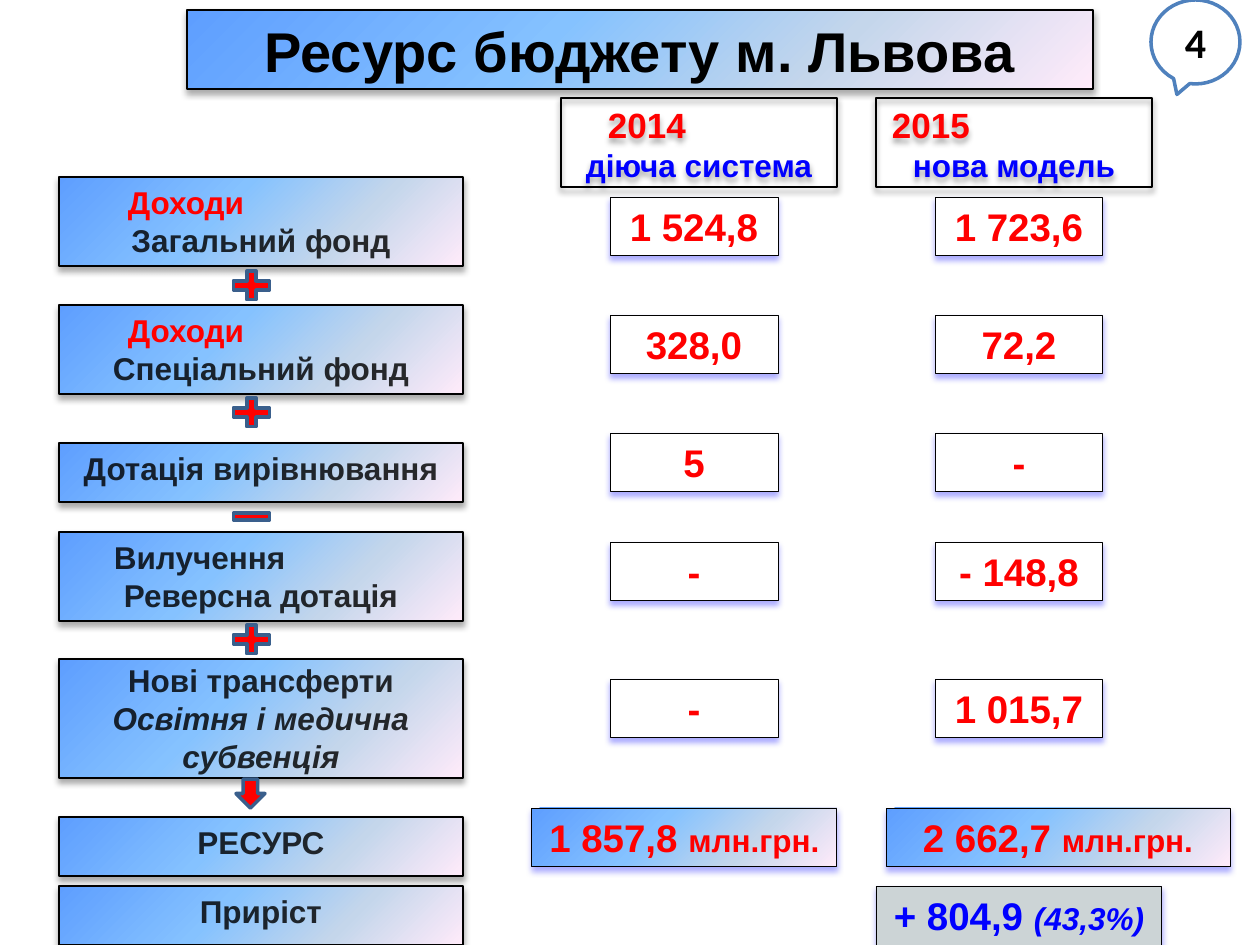
"""Build the Lviv budget resource slide."""
import pptx
import pptx.util
import pptx.oxml
import pptx.oxml.ns
import pptx.dml.color
import pptx.enum.shapes
import pptx.enum.text
from dataclasses import dataclass

MSO = pptx.enum.shapes.MSO_SHAPE
ALIGN = pptx.enum.text.PP_ALIGN
ANCHOR = pptx.enum.text.MSO_ANCHOR
NS = pptx.oxml.ns.nsdecls("a")


@dataclass
class Theme:
    gradient = ((0, "5E9EFF"), (40, "85C2FF"), (70, "C4D6EB"), (100, "FFEBFA"))
    black, white, grey = "000000", "FFFFFF", "CCD4D6"
    red, blue = "FF0000", "0000FF"
    sign_line, callout_line = "3A5F8C", "4F81BD"
    title, number, value, year, label = 32, 24, 22, 20, 18


T = Theme()
STYLES = {
    "title": (T.title, T.black, 100, False),
    "number": (T.number, T.black, 100, False),
    "year": (T.year, T.red, 100, False),
    "model": (T.label, T.blue, 100, False),
    "income": (T.label, T.red, 100, False),
    "label": (T.label, T.black, 81, False),
    "label_i": (T.label, T.black, 81, True),
    "value": (T.value, T.red, 100, False),
    "unit": (T.label, T.red, 100, False),
    "growth": (T.value, T.blue, 100, False),
    "percent": (T.label, T.blue, 100, True),
}

TITLE = "Ресурс бюджету м. Львова"
HEADERS = [
    (561, 34, "2014", "діюча система"),
    (876, 3, "2015", "нова модель"),
]
LABELS = [
    (177, 89, 6, [(56, "Доходи", "income"), (0, "Загальний фонд", "label")]),
    (305, 89, 6, [(56, "Доходи", "income"), (0, "Спеціальний фонд", "label")]),
    (443, 59, 6, [(0, "Дотація вирівнювання", "label")]),
    (532, 89, 6, [(42, "Вилучення", "label"), (0, "Реверсна дотація", "label")]),
    (659, 119, 2, [(0, "Нові трансферти", "label"),
                   (0, "Освітня і медична субвенція", "label_i")]),
    (817, 59, 6, [(0, "РЕСУРС", "label")]),
    (886, 59, 6, [(0, "Приріст", "label")]),
]
SIGNS = [
    (MSO.MATH_PLUS, 227, 266, 49, 39),
    (MSO.MATH_PLUS, 227, 393, 49, 39),
    (MSO.MATH_PLUS, 227, 620, 49, 39),
    (MSO.MATH_MINUS, 227, 502, 49, 29),
    (MSO.DOWN_ARROW, 236, 779, 29, 29),
]
VALUE_X = (610, 935)
VALUES = [
    (197, "1 524,8", "1 723,6"),
    (315, "328,0", "72,2"),
    (433, "5", "-"),
    (542, "-", "- 148,8"),
    (679, "-", "1 015,7"),
]
TOTALS = [
    (532, 808, 305, T.gradient, ("1 857,8 ", "value"), ("млн.грн.", "unit")),
    (886, 808, 344, T.gradient, ("2 662,7 ", "value"), ("млн.грн.", "unit")),
    (876, 886, 286, T.grey, ("+ 804,9 ", "growth"), ("(43,3%)", "percent")),
]


def px(n):
    return pptx.util.Emu(round(n * 914400 / 126))


def rgb(value):
    return pptx.dml.color.RGBColor.from_string(value)


def paint(sp, fill, line, width):
    if fill is None:
        sp.fill.background()
    elif isinstance(fill, str):
        sp.fill.solid()
        sp.fill.fore_color.rgb = rgb(fill)
    else:
        sp.fill.gradient()
        grad = sp._element.spPr.find(pptx.oxml.ns.qn("a:gradFill"))
        stops = "".join(f'<a:gs pos="{pos * 1000}"><a:srgbClr val="{color}"/></a:gs>'
                        for pos, color in fill)
        grad.getparent().replace(grad, pptx.oxml.parse_xml(
            f'<a:gradFill {NS} rotWithShape="1"><a:gsLst>{stops}</a:gsLst>'
            '<a:lin ang="2700000" scaled="0"/></a:gradFill>'))
    sp.line.color.rgb = rgb(line)
    sp.line.width = pptx.util.Pt(width)
    sp.shadow.inherit = False


def cast_shadow(sp, color):
    effects = sp._element.spPr.find(pptx.oxml.ns.qn("a:effectLst"))
    effects.append(pptx.oxml.parse_xml(
        f'<a:outerShdw {NS} blurRad="44450" dist="27940" dir="5400000" algn="ctr">'
        f'<a:srgbClr val="{color}"><a:alpha val="32000"/></a:srgbClr></a:outerShdw>'))


def write(sp, lines, anchor=ANCHOR.TOP, font="Arial", after=10, margin=6):
    tf = sp.text_frame
    tf.word_wrap = True
    tf.auto_size = pptx.enum.text.MSO_AUTO_SIZE.NONE
    tf.vertical_anchor = anchor
    tf.margin_left = tf.margin_right = px(13)
    tf.margin_top = tf.margin_bottom = px(margin)
    for i, (indent, runs) in enumerate(lines):
        p = tf.add_paragraph() if i else tf.paragraphs[0]
        p.alignment = ALIGN.LEFT if indent else ALIGN.CENTER
        if indent:
            p._p.get_or_add_pPr().set("marL", str(px(indent)))
        p.line_spacing = 1.0
        p.space_before = pptx.util.Pt(0)
        p.space_after = pptx.util.Pt(after if i == len(lines) - 1 else 0)
        for text, style in runs:
            size, color, alpha, italic = STYLES[style]
            r = p.add_run()
            r.text = text
            r.font.name = font
            r.font.size = pptx.util.Pt(size)
            r.font.bold = True
            r.font.italic = italic
            r.font.color.rgb = rgb(color)
            if alpha < 100:
                clr = r._r.rPr.find(".//" + pptx.oxml.ns.qn("a:srgbClr"))
                clr.append(pptx.oxml.parse_xml(f'<a:alpha {NS} val="{alpha * 1000}"/>'))


def add(s, kind, x, y, w, h):
    return s.shapes.add_shape(kind, px(x), px(y), px(w), px(h))


def add_box(s, x, y, w, h, lines, fill, width=1.5, shadow=T.black, margin=6):
    sp = add(s, MSO.RECTANGLE, x, y, w, h)
    paint(sp, fill, T.black, width)
    cast_shadow(sp, shadow)
    write(sp, lines, margin=margin)


def main():
    prs = pptx.Presentation()
    prs.slide_width, prs.slide_height = px(1260), px(945)
    s = prs.slides.add_slide(prs.slide_layouts[5])

    sp = s.shapes.title
    sp.left, sp.top, sp.width, sp.height = px(187), px(10), px(906), px(79)
    paint(sp, T.gradient, T.black, 1.5)
    cast_shadow(sp, T.black)
    write(sp, [(0, [(TITLE, "title")])])

    for x, indent, year, model in HEADERS:
        add_box(s, x, 98, 276, 89,
                [(indent, [(year, "year")]), (0, [(model, "model")])], None)
    for y, h, margin, lines in LABELS:
        add_box(s, 59, y, 404, h,
                [(indent, [(text, style)]) for indent, text, style in lines],
                T.gradient, margin=margin)
    for kind, x, y, w, h in SIGNS:
        paint(add(s, kind, x, y, w, h), T.red, T.sign_line, 2)
    for y, *row in VALUES:
        for x, text in zip(VALUE_X, row):
            add_box(s, x, y, 168, 59, [(0, [(text, "value")])], T.white, 0.5, T.blue)
    for x, y, w, fill, *runs in TOTALS:
        add_box(s, x, y, w, 59, [(0, runs)], fill, 0.5, T.blue)

    sp = add(s, MSO.OVAL_CALLOUT, 1151, 0, 89, 84)
    paint(sp, T.white, T.callout_line, 2)
    write(sp, [(0, [("4", "number")])], ANCHOR.MIDDLE, "Calibri", 0)
    prs.save("out.pptx")


if __name__ == "__main__":
    main()
